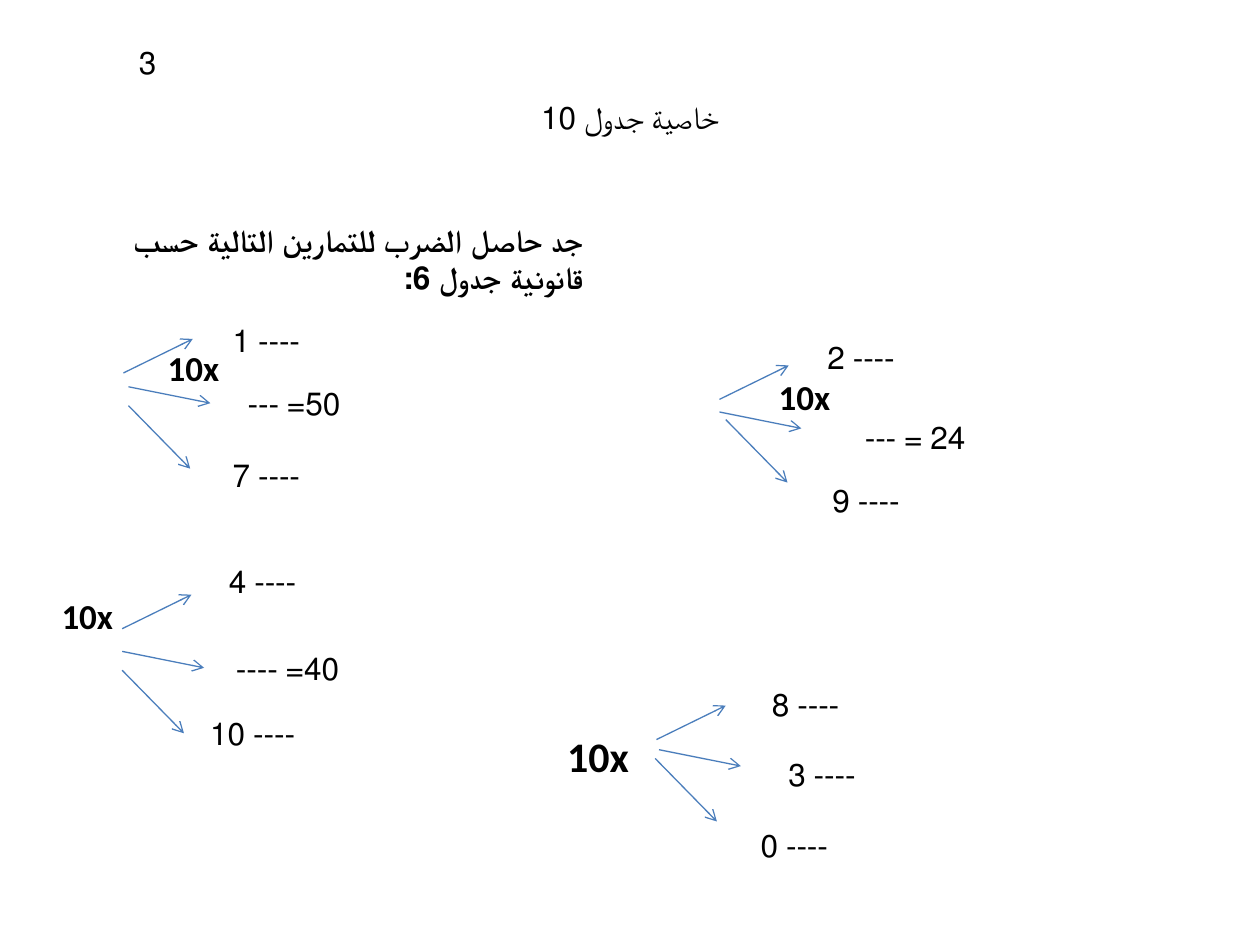
"""Builds a worksheet slide on the ten times table."""
import pptx
import pptx.util
import pptx.dml.color
import pptx.enum.shapes
import pptx.enum.text
import pptx.oxml
import pptx.oxml.ns
from pptx.util import Inches

COLORS = {"text": "000000", "arrow": "4B7EBC"}
FONT = "Calibri"
ALIGN = pptx.enum.text.PP_ALIGN
STEPS = [(0.55, -0.27), (0.65, 0.13), (0.49, 0.5)]
PANEL = (4.34, 2.87)

# Each fan: arrow starts, then answers as (text, left, top, width)
FANS = [
    ([(0.98, 2.96), (1.02, 3.07), (1.02, 3.22)],
     [("---- 1", 1.65, 2.5, 0.83), ("50= ---", 1.73, 3, 1.07), ("---- 7", 1.65, 3.57, 0.83)]),
    ([(0.97, 4.99), (0.97, 5.17), (0.97, 5.32)],
     [("---- 4", 1.62, 4.41, 0.83), ("40= ----", 1.71, 5.1, 1.08), ("---- 10", 1.52, 5.62, 0.92)]),
    ([(5.71, 3.17), (5.71, 3.27), (5.76, 3.33)],
     [("---- 2", 6.37, 2.63, 0.83), ("24 = ---", 6.54, 3.27, 1.22), ("---- 9", 6.41, 3.77, 0.83)]),
    ([(5.21, 5.87), (5.23, 5.95), (5.2, 6.02)],
     [("---- 8", 5.93, 5.39, 0.83), ("---- 3", 6.06, 5.94, 0.83), ("---- 0", 5.84, 6.51, 0.83)]),
]


def rgb(name):
    return pptx.dml.color.RGBColor.from_string(COLORS[name])


def place(sp, left, top, width, height):
    sp.left, sp.top = Inches(left), Inches(top)
    sp.width, sp.height = Inches(width), Inches(height)


def write(p, text, size=18, bold=False, align=ALIGN.RIGHT, rtl=True):
    p.alignment = align
    if rtl:
        p._p.get_or_add_pPr().set("rtl", "1")
    r = p.add_run()
    r.text = text
    r.font.name = FONT
    r.font.size = pptx.util.Pt(size)
    r.font.bold = bold
    r.font.color.rgb = rgb("text")


def remove_bullet(p, indent=0):
    pPr = p._p.get_or_add_pPr()
    pPr.set("marL", str(Inches(indent)))
    pPr.set("indent", "0")
    pPr.append(pptx.oxml.parse_xml("<a:buNone %s/>" % pptx.oxml.ns.nsdecls("a")))


def add_text(s, text, left, top, width, height=0.4, **style):
    sp = s.shapes.add_textbox(*map(Inches, (left, top, width, height)))
    tf = sp.text_frame
    tf.word_wrap = True
    write(tf.paragraphs[0], text, **style)
    return tf


def add_panel(s, left, top, inset_left, inset_top):
    tf = add_text(s, "10x", left, top, *PANEL, size=20, bold=True,
                  align=ALIGN.LEFT, rtl=False)
    tf.margin_left, tf.margin_top = Inches(inset_left), Inches(inset_top)


def add_arrow(s, x, y, dx, dy):
    c = s.shapes.add_connector(pptx.enum.shapes.MSO_CONNECTOR.STRAIGHT,
                               *map(Inches, (x, y, x + dx, y + dy)))
    c.line.color.rgb = rgb("arrow")
    c.line.width = pptx.util.Pt(0.75)
    ns = pptx.oxml.ns.nsdecls("a")
    spPr = c._element.spPr
    ln = spPr.find(pptx.oxml.ns.qn("a:ln"))
    ln.append(pptx.oxml.parse_xml('<a:tailEnd %s type="arrow"/>' % ns))
    spPr.append(pptx.oxml.parse_xml("<a:effectLst %s/>" % ns))


def add_fan(s, starts, answers):
    for (x, y), (dx, dy) in zip(starts, STEPS):
        add_arrow(s, x, y, dx, dy)
    for answer in answers:
        add_text(s, *answer)


def fill_title(s):
    sp = s.shapes.title
    place(sp, 0.5, 0.3, 9, 1.25)
    write(sp.text_frame.paragraphs[0], "خاصية جدول 10", align=ALIGN.CENTER)


def fill_body(s):
    sp = s.placeholders[1]
    place(sp, 0.39, 1.7, *PANEL)
    tf = sp.text_frame
    p = tf.paragraphs[0]
    remove_bullet(p)
    write(p, "جد حاصل الضرب للتمارين التالية حسب قانونية جدول 6:", bold=True)
    p = tf.add_paragraph()
    p.space_before = pptx.util.Pt(29)
    remove_bullet(p, 0.84)
    write(p, "10x", size=20, bold=True, align=ALIGN.LEFT, rtl=False)


def main():
    prs = pptx.Presentation()
    prs.slide_width, prs.slide_height = Inches(10), Inches(7.5)
    s = prs.slides.add_slide(prs.slide_layouts[1])
    fill_title(s)
    fill_body(s)
    add_panel(s, 0.39, 4.3, 0.1, 0.42)
    add_panel(s, 5.24, 1.75, 0.94, 1.23)
    for fan in FANS:
        add_fan(s, *fan)
    add_text(s, "3", 0.98, 0.29, 0.36)
    add_text(s, "10x", 4.37, 5.75, 0.72, 0.5, size=24, bold=True)
    prs.save("out.pptx")


if __name__ == "__main__":
    main()
